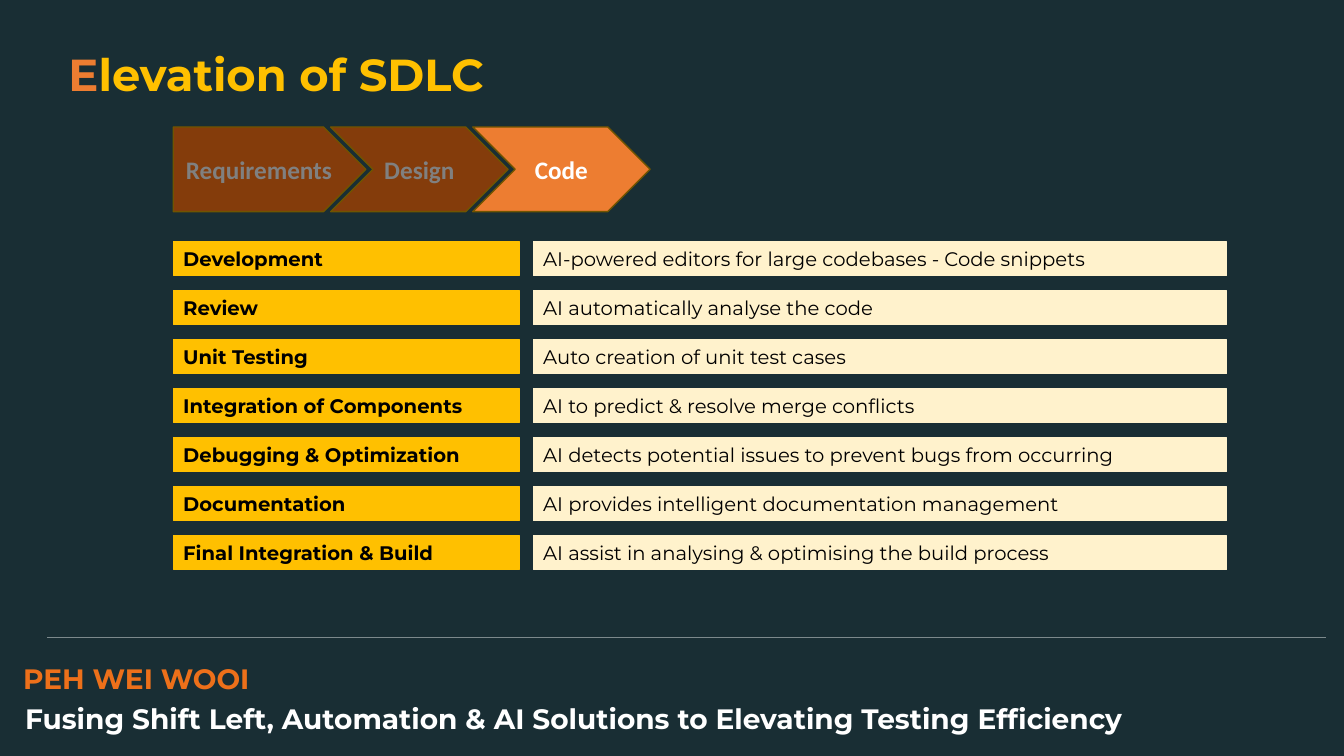
from lxml.etree import SubElement
from pptx import Presentation
from pptx.dml.color import RGBColor
from pptx.enum.shapes import MSO_CONNECTOR, MSO_SHAPE
from pptx.enum.text import MSO_ANCHOR, PP_ALIGN
from pptx.oxml.ns import qn
from pptx.util import Pt


def color(hex_string):
    return RGBColor.from_string(hex_string)


def write(shape, *runs, size=14, font="Montserrat", bold=True, align=PP_ALIGN.LEFT,
          anchor=MSO_ANCHOR.TOP, spacing=1.0):
    frame = shape.text_frame
    frame.word_wrap = True
    frame.vertical_anchor = anchor
    paragraph = frame.paragraphs[0]
    paragraph.alignment = align
    paragraph.line_spacing = spacing
    for text, text_color in runs:
        run = paragraph.add_run()
        run.text = text
        run.font.size = Pt(size)
        run.font.name = font
        run.font.bold = bold
        run.font.color.rgb = color(text_color)


presentation = Presentation()
presentation.slide_width = Pt(960)
presentation.slide_height = Pt(540)
slide = presentation.slides.add_slide(presentation.slide_layouts[6])
slide.background.fill.solid()
slide.background.fill.fore_color.rgb = color("192E34")

divider = slide.shapes.add_connector(
    MSO_CONNECTOR.STRAIGHT, Pt(33.8), Pt(455), Pt(947.5), Pt(455))
divider.line.color.rgb = color("7C898C")
divider.line.width = Pt(0.5)
SubElement(divider._element.spPr, qn("a:effectLst"))

title = slide.shapes.add_textbox(Pt(41.8), Pt(29.5), Pt(898), Pt(46))
write(title, ("E", "ED7D31"), ("levation of SDLC", "FFC000"), size=32)

footers = [
    ("PEH WEI WOOI", "ED701A", 9.4, 471.6, 343, 25),
    ("Fusing Shift Left, Automation & AI Solutions to Elevating Testing Efficiency",
     "FFFFFF", 10.8, 500.4, 816.5, 17.3),
]
for text, text_color, left, top, width, height in footers:
    footer = slide.shapes.add_textbox(Pt(left), Pt(top), Pt(width), Pt(height))
    write(footer, (text, text_color), size=20, spacing=0.9)

phases = [
    ("Requirements", MSO_SHAPE.PENTAGON, 123.8, 137.5, "843C0B", "808080"),
    ("Design", MSO_SHAPE.CHEVRON, 236.2, 126.7, "843C0B", "808080"),
    ("Code", MSO_SHAPE.CHEVRON, 337.7, 126.7, "ED7D31", "FFFFFF"),
]
for text, kind, left, width, fill_color, text_color in phases:
    phase = slide.shapes.add_shape(kind, Pt(left), Pt(90.7), Pt(width), Pt(60.5))
    phase.shadow.inherit = False
    phase.fill.solid()
    phase.fill.fore_color.rgb = color(fill_color)
    phase.line.color.rgb = color("705400")
    phase.line.width = Pt(1)
    write(phase, (text, text_color), size=18, font="Calibri",
          align=PP_ALIGN.CENTER, anchor=MSO_ANCHOR.MIDDLE)

activities = [
    ("Development", "AI-powered editors for large codebases - Code snippets"),
    ("Review", "AI automatically analyse the code"),
    ("Unit Testing", "Auto creation of unit test cases"),
    ("Integration of Components", "AI to predict & resolve merge conflicts"),
    ("Debugging & Optimization", "AI detects potential issues to prevent bugs from occurring"),
    ("Documentation", "AI provides intelligent documentation management"),
    ("Final Integration & Build", "AI assist in analysing & optimising the build process"),
]
columns = [(123.8, 247, "FFC000", True), (380.9, 495.4, "FFF2CC", False)]
for row, texts in enumerate(activities):
    for text, (left, width, fill_color, bold) in zip(texts, columns):
        bar = slide.shapes.add_shape(
            MSO_SHAPE.RECTANGLE, Pt(left), Pt(172.8 + 35 * row), Pt(width), Pt(24.2))
        bar.shadow.inherit = False
        bar.fill.solid()
        bar.fill.fore_color.rgb = color(fill_color)
        bar.line.color.rgb = color(fill_color)
        bar.line.width = Pt(0.75)
        write(bar, (text, "000000"), bold=bold)

presentation.save("out.pptx")
